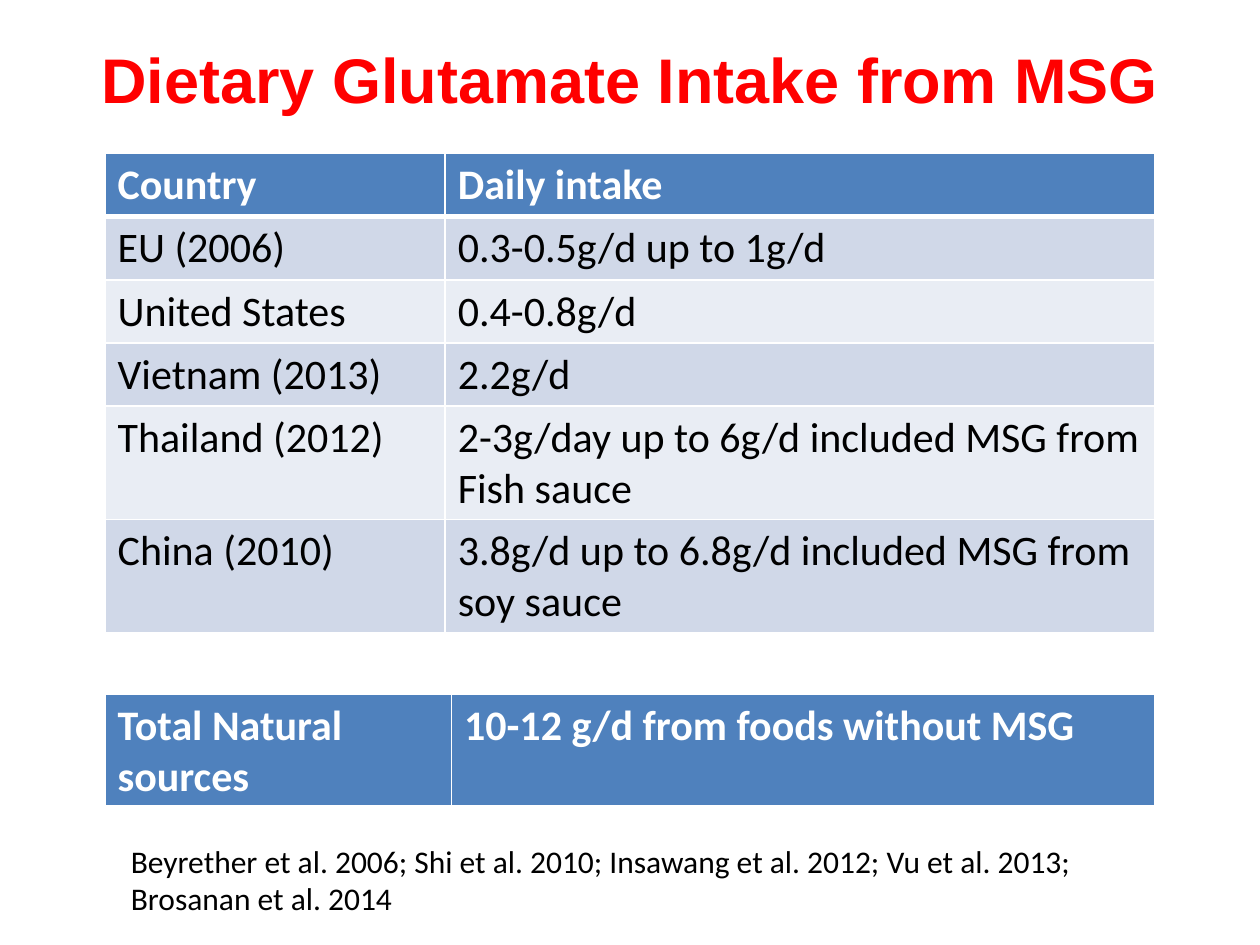
from lxml import etree
from pptx import Presentation
from pptx import util as u
from pptx.dml.color import RGBColor
from pptx.enum import text
from pptx.oxml import ns

COLORS = {
    "title": "FF0000",
    "header": "4F81BD",
    "odd": "D0D8E8",
    "even": "E9EDF4",
    "white": "FFFFFF",
    "black": "000000",
}
WIDTH, HEIGHT = 10, 7.5
LEFT, TABLE_WIDTH = WIDTH / 12, WIDTH * 5 / 6
LINE_HEIGHT, CELL_PADDING = 0.4, 0.1

INTAKES = [
    ("Country", "Daily intake", 1),
    ("EU (2006)", "0.3-0.5g/d up to 1g/d", 1),
    ("United States", "0.4-0.8g/d", 1),
    ("Vietnam (2013)", "2.2g/d", 1),
    ("Thailand (2012)", "2-3g/day up to 6g/d included MSG from Fish sauce", 2),
    ("China (2010)", "3.8g/d up to 6.8g/d included MSG from soy sauce", 2),
]
NATURAL = [("Total Natural sources", "10-12 g/d from foods without MSG", 2)]
REFERENCES = [
    "Beyrether et al. 2006; Shi et al. 2010; Insawang et al. 2012; Vu et al. 2013;",
    "Brosanan et al. 2014",
]


def rgb(name):
    return RGBColor.from_string(COLORS[name])


def write(tf, lines, size=24, font="Calibri", color="black", bold=False,
          align=text.PP_ALIGN.LEFT):
    for i, line in enumerate(lines):
        p = tf.paragraphs[0] if i == 0 else tf.add_paragraph()
        p.alignment = align
        r = p.add_run()
        r.text = line
        r.font.size = u.Pt(size)
        r.font.name = font
        r.font.bold = bold
        r.font.color.rgb = rgb(color)


def add_text(s, box, lines, anchor=text.MSO_ANCHOR.TOP, wrap=True, **style):
    sp = s.shapes.add_textbox(*(u.Inches(v) for v in box))
    tf = sp.text_frame
    tf.word_wrap = wrap
    tf.vertical_anchor = anchor
    write(tf, lines, **style)


def add_borders(cell, bottom):
    tcPr = cell._tc.get_or_add_tcPr()
    for side, width in (("L", 1), ("R", 1), ("T", 1), ("B", bottom)):
        ln = etree.SubElement(tcPr, ns.qn(f"a:ln{side}"), w=str(u.Pt(width)))
        fill = etree.SubElement(ln, ns.qn("a:solidFill"))
        etree.SubElement(fill, ns.qn("a:srgbClr"), val=COLORS["white"])


def add_table(s, top, first_col, rows):
    heights = [lines * LINE_HEIGHT + CELL_PADDING for *_, lines in rows]
    frame = s.shapes.add_table(len(rows), 2, u.Inches(LEFT), u.Inches(top),
                               u.Inches(TABLE_WIDTH), u.Inches(sum(heights)))
    table = frame.table
    table.horz_banding = False
    for col, width in zip(table.columns, (first_col, TABLE_WIDTH - first_col)):
        col.width = u.Inches(width)
    for i, (*values, _) in enumerate(rows):
        table.rows[i].height = u.Inches(heights[i])
        header = i == 0
        fill = "header" if header else "odd" if i % 2 else "even"
        for j, value in enumerate(values):
            cell = table.cell(i, j)
            add_borders(cell, 3 if header else 1)
            cell.fill.solid()
            cell.fill.fore_color.rgb = rgb(fill)
            write(cell.text_frame, [value], bold=header,
                  color="white" if header else "black")


def main():
    prs = Presentation()
    prs.slide_width, prs.slide_height = u.Inches(WIDTH), u.Inches(HEIGHT)
    s = prs.slides.add_slide(prs.slide_layouts[6])
    add_text(s, (WIDTH * 0.05, 0, WIDTH * 0.9, HEIGHT / 6),
             ["Dietary Glutamate Intake from MSG"],
             anchor=text.MSO_ANCHOR.MIDDLE, size=36, font="Arial",
             color="title", bold=True, align=text.PP_ALIGN.CENTER)
    add_table(s, 1.22, 2.7, INTAKES)
    add_table(s, 5.51, 2.75, NATURAL)
    add_text(s, (0.94, 6.63, 7.81, 0.71), REFERENCES, wrap=False, size=18)
    prs.save("out.pptx")


if __name__ == "__main__":
    main()
